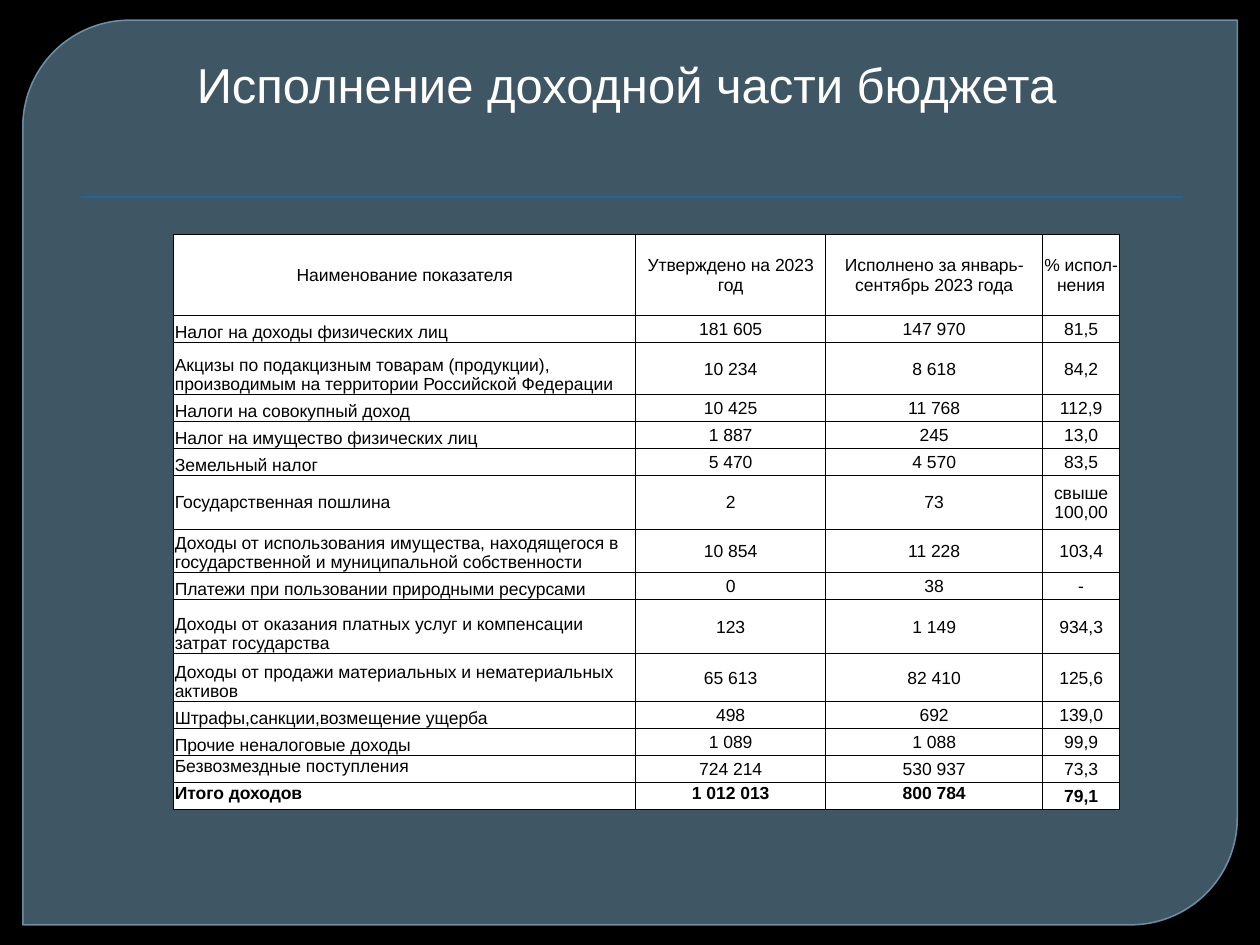
"""Build a slide with the table of budget revenue for January to September 2023."""
import pptx
import pptx.util
import pptx.dml.color
import pptx.enum.shapes
import pptx.enum.text
import pptx.oxml

Pt = pptx.util.Pt
RGB = pptx.dml.color.RGBColor
Kind = pptx.enum.shapes.MSO_SHAPE
Side = pptx.enum.text.PP_ALIGN
Hold = pptx.enum.text.MSO_ANCHOR

BLACK = RGB(0x00, 0x00, 0x00)
WHITE = RGB(0xFF, 0xFF, 0xFF)
SLATE = RGB(0x61, 0x86, 0x9C)
EDGE = RGB(0x77, 0x9B, 0xB2)
BLUE = RGB(0x0F, 0x6F, 0xC6)
NS = 'xmlns:a="http://schemas.openxmlformats.org/drawingml/2006/main"'


def fade(part, share):
    tint = part.find(".//" + pptx.oxml.ns.qn("a:srgbClr"))
    tint.append(pptx.oxml.parse_xml(f'<a:alpha {NS} val="{share * 1000}"/>'))


def write(frame, text, side, look):
    para = frame.paragraphs[0]
    para.alignment = side
    run = para.add_run()
    run.text = text
    run.font.color.rgb = look["ink"]
    for name, value in look["font"].items():
        setattr(run.font, name, value)


deck = pptx.Presentation()
deck.slide_width, deck.slide_height = Pt(720), Pt(540)
slide = deck.slides.add_slide(deck.slide_layouts[6])
slide.background.fill.solid()
slide.background.fill.fore_color.rgb = BLACK

panel = slide.shapes.add_shape(Kind.ROUND_2_DIAG_RECTANGLE, Pt(13), Pt(11.5), Pt(694), Pt(517))
panel.shadow.inherit = False
panel.adjustments[0] = 0.118
panel.adjustments[1] = 0
panel.fill.solid()
panel.fill.fore_color.rgb = SLATE
fade(panel.element.spPr, 65)
panel.line.color.rgb = EDGE
panel.line.width = Pt(0.87)
fade(panel.line._get_or_add_ln(), 88)

rule = slide.shapes.add_shape(Kind.RECTANGLE, Pt(46), Pt(112.2), Pt(630), Pt(0.7))
rule.shadow.inherit = False
rule.fill.solid()
rule.fill.fore_color.rgb = BLUE
rule.line.fill.background()
glow = rule.element.spPr.find(pptx.oxml.ns.qn("a:effectLst"))
glow.append(pptx.oxml.parse_xml(
    f'<a:outerShdw {NS} blurRad="12700" dist="12700" dir="5400000">'
    '<a:srgbClr val="000000"><a:alpha val="75000"/></a:srgbClr></a:outerShdw>'))

title = slide.shapes.add_textbox(Pt(34), Pt(16.5), Pt(648), Pt(52)).text_frame
title.word_wrap = True
title.vertical_anchor = Hold.BOTTOM
write(title, "Исполнение доходной части бюджета", Side.CENTER,
      {"ink": WHITE, "font": {"name": "Arial", "size": Pt(28)}})

LOW, MID, TOP = Hold.BOTTOM, Hold.MIDDLE, Hold.TOP
LINE = 15.4
rows = [
    (46.3, MID, "Наименование показателя", "Утверждено на 2023 год",
     "Исполнено за январь-сентябрь 2023 года", "% испол-нения"),
    (LINE, LOW, "Налог на доходы физических лиц", "181 605", "147 970", "81,5"),
    (29.7, LOW, "Акцизы по подакцизным товарам (продукции), производимым на территории "
     "Российской Федерации", "10 234", "8 618", "84,2"),
    (LINE, LOW, "Налоги на совокупный доход", "10 425", "11 768", "112,9"),
    (LINE, LOW, "Налог на имущество физических лиц", "1 887", "245", "13,0"),
    (LINE, LOW, "Земельный налог", "5 470", "4 570", "83,5"),
    (30.9, MID, "Государственная пошлина", "2", "73", "свыше 100,00"),
    (24.6, LOW, "Доходы от использования имущества, находящегося в государственной и "
     "муниципальной собственности", "10 854", "11 228", "103,4"),
    (LINE, LOW, "Платежи при пользовании природными ресурсами", "0", "38", "-"),
    (30.9, LOW, "Доходы от оказания платных услуг и компенсации затрат государства",
     "123", "1 149", "934,3"),
    (27.4, LOW, "Доходы от продажи материальных и нематериальных активов",
     "65 613", "82 410", "125,6"),
    (LINE, LOW, "Штрафы,санкции,возмещение ущерба", "498", "692", "139,0"),
    (LINE, LOW, "Прочие неналоговые доходы", "1 089", "1 088", "99,9"),
    (LINE, TOP, "Безвозмездные поступления", "724 214", "530 937", "73,3"),
    (LINE, TOP, "Итого доходов", "1 012 013", "800 784", "79,1"),
]
wides = [264, 108.6, 124, 44]
last = len(rows) - 1
inset = {"margin_left": Pt(0.7), "margin_right": Pt(0.7), "margin_top": Pt(0.7), "margin_bottom": 0}

grid = slide.shapes.add_table(len(rows), len(wides), Pt(99.2), Pt(134), Pt(sum(wides)),
                              Pt(sum(row[0] for row in rows))).table
grid.first_row = grid.horz_banding = False
for col, wide in zip(grid.columns, wides):
    col.width = Pt(wide)

for r, (high, hold, *texts) in enumerate(rows):
    grid.rows[r].height = Pt(high)
    look = {"ink": BLACK, "font": {"name": "Arial", "size": Pt(10), "bold": r == last}}
    for c, text in enumerate(texts):
        cell = grid.cell(r, c)
        for name, value in inset.items():
            setattr(cell, name, value)
        cell.vertical_anchor = hold if c == 0 or (r == last and c < 3) else MID
        side = Side.CENTER if r == 0 or c > 0 else Side.JUSTIFY if hold == TOP else Side.LEFT
        write(cell.text_frame, text, side, look)
        cell.fill.solid()
        cell.fill.fore_color.rgb = WHITE
        props = cell._tc.get_or_add_tcPr()
        for spot, edge in enumerate("LRTB"):
            props.insert(spot, pptx.oxml.parse_xml(
                f'<a:ln{edge} {NS} w="{Pt(0.5)}"><a:solidFill><a:srgbClr val="{BLACK}"/>'
                f'</a:solidFill></a:ln{edge}>'))

deck.save("out.pptx")
